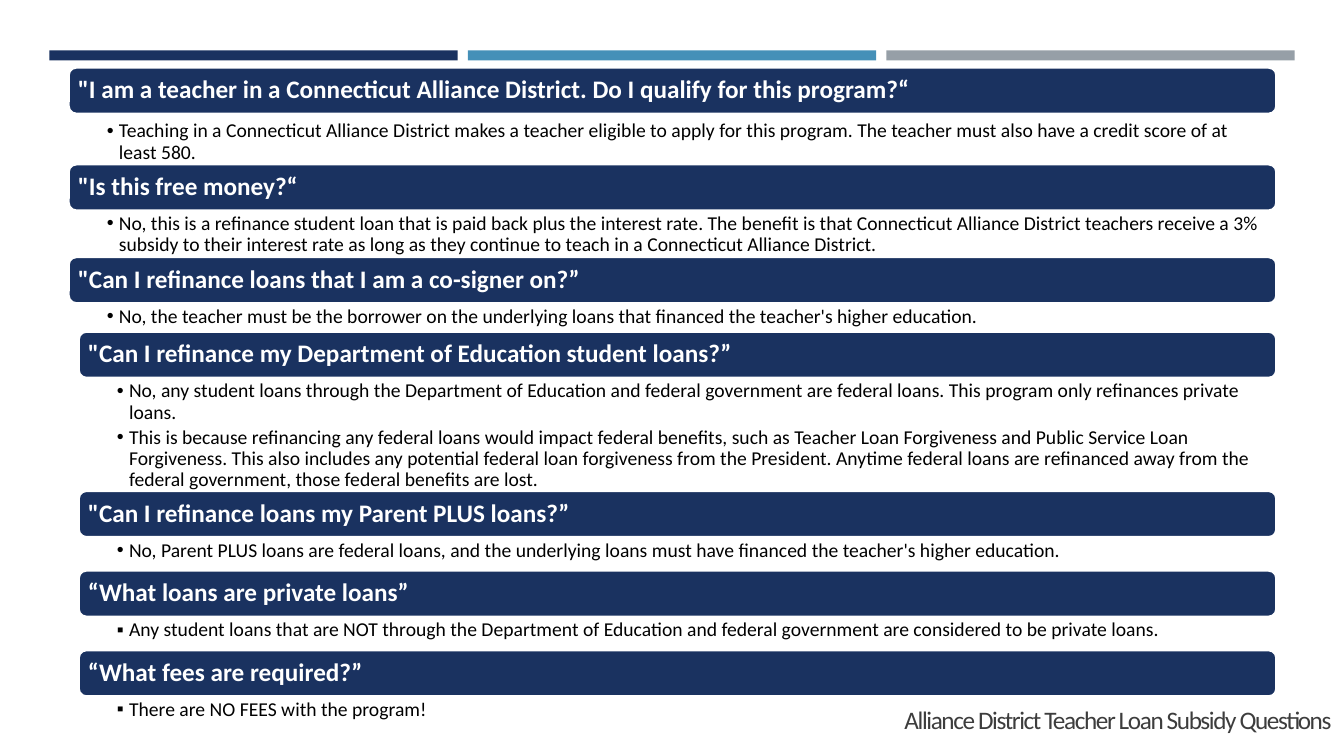
from dataclasses import dataclass

from lxml import etree
from pptx import Presentation
from pptx.dml.color import RGBColor
from pptx.enum.shapes import MSO_SHAPE
from pptx.enum.text import MSO_ANCHOR, MSO_AUTO_SIZE, PP_ALIGN
from pptx.oxml.ns import qn
from pptx.util import Inches, Pt

RECT = MSO_SHAPE.RECTANGLE
ROUND = MSO_SHAPE.ROUNDED_RECTANGLE
TOP, MIDDLE = MSO_ANCHOR.TOP, MSO_ANCHOR.MIDDLE
LEFT = PP_ALIGN.LEFT
GROW = MSO_AUTO_SIZE.SHAPE_TO_FIT_TEXT


@dataclass(frozen=True)
class Theme:
    """Hold the colours, font and type sizes of the slide."""
    navy: str = "1A3260"
    blue: str = "4590B8"
    gray: str = "969FA7"
    white: str = "FFFFFF"
    black: str = "000000"
    dark: str = "3D3D3D"
    font: str = "Calibri"
    large: int = 18
    small: int = 14


THEME = Theme()
BAR = 0.46
RIGHT = 12.66
TITLE = "Alliance District Teacher Loan Subsidy Questions"

FIRST = [
    ("\"I am a teacher in a Connecticut Alliance District. Do I qualify for this program?“", "•", 0.04, 0.46,
     ["Teaching in a Connecticut Alliance District makes a teacher eligible to apply for this program. "
      "The teacher must also have a credit score of at least 580."]),
    ("\"Is this free money?“", "•", 0, 0.46,
     ["No, this is a refinance student loan that is paid back plus the interest rate. The benefit is that "
      "Connecticut Alliance District teachers receive a 3% subsidy to their interest rate as long as they "
      "continue to teach in a Connecticut Alliance District."]),
    ("\"Can I refinance loans that I am a co-signer on?”", "•", 0, 0.33,
     ["No, the teacher must be the borrower on the underlying loans that financed the teacher's "
      "higher education."]),
]

SECOND = [
    ("\"Can I refinance my Department of Education student loans?”", "•", 0, 1.12,
     ["No, any student loans through the Department of Education and federal government are federal loans. "
      "This program only refinances private loans.",
      "This is because refinancing any federal loans would impact federal benefits, such as Teacher Loan "
      "Forgiveness and Public Service Loan Forgiveness. This also includes any potential federal loan "
      "forgiveness from the President. Anytime federal loans are refinanced away from the federal "
      "government, those federal benefits are lost."]),
    ("\"Can I refinance loans my Parent PLUS loans?”", "•", 0, 0.33,
     ["No, Parent PLUS loans are federal loans, and the underlying loans must have financed the teacher's "
      "higher education."]),
    ("“What loans are private loans”", "▪", 0, 0.33,
     ["Any student loans that are NOT through the Department of Education and federal government are "
      "considered to be private loans."]),
    ("“What fees are required?”", "▪", 0, 0.33,
     ["There are NO FEES with the program!"]),
]


def color(code):
    """Turn a hex code into a colour."""
    return RGBColor.from_string(code)


def add_mark(para, mark):
    """Give a paragraph a bullet with a hanging indent."""
    props = para._p.get_or_add_pPr()
    props.set("marL", str(Inches(0.12)))
    props.set("indent", str(Inches(-0.12)))
    etree.SubElement(props, qn("a:buFont")).set("typeface", "Arial")
    etree.SubElement(props, qn("a:buChar")).set("char", mark)


def write(frame, lines, size, ink, bold=False, mark=None, anchor=TOP,
          inset=(0.1, 0.05, 0.1, 0.05), wrap=True, lead=0.9, after=0, track=None):
    """Fill a text frame with one paragraph for each line."""
    frame.word_wrap = wrap
    frame.vertical_anchor = anchor
    (frame.margin_left, frame.margin_top,
     frame.margin_right, frame.margin_bottom) = map(Inches, inset)
    for i, line in enumerate(lines):
        para = frame.add_paragraph() if i else frame.paragraphs[0]
        if mark:
            add_mark(para, mark)
        para.alignment = LEFT
        para.line_spacing = lead
        para.space_after = Pt(after)
        run = para.add_run()
        run.text = line
        font = run.font
        font.name, font.size, font.bold = THEME.font, Pt(size), bold
        font.color.rgb = color(ink)
        if track is not None:
            run._r.get_or_add_rPr().set("spc", str(track))


def add_block(slide, kind, box, fill, edge=None):
    """Draw a filled shape with an optional edge."""
    shape = slide.shapes.add_shape(kind, *map(Inches, box))
    shape.shadow.inherit = False
    shape.fill.solid()
    shape.fill.fore_color.rgb = color(fill)
    if edge:
        shape.line.color.rgb = color(edge)
        shape.line.width = Pt(1.75)
    else:
        shape.line.fill.background()
    return shape


def add_title(slide):
    """Place the title in the lower right corner."""
    title = slide.shapes.title
    title.left, title.top, title.width, title.height = map(Inches, (8.87, 6.94, 4.47, 0.4))
    write(title.text_frame, [TITLE], THEME.large, THEME.dark, wrap=False, lead=1.0, track=-100)
    title.text_frame.auto_size = GROW


def add_list(slide, left, top, items):
    """Stack questions and their answers down the slide."""
    width = RIGHT - left
    for ask, mark, gap, height, lines in items:
        bar = add_block(slide, ROUND, (left, top, width, BAR), THEME.navy, THEME.white)
        write(bar.text_frame, [ask], THEME.large, THEME.white, bold=True,
              anchor=MIDDLE, inset=(0.07,) * 4)
        top += BAR + gap
        reply = slide.shapes.add_textbox(*map(Inches, (left, top, width, height)))
        write(reply.text_frame, lines, THEME.small, THEME.black, mark=mark,
              inset=(0.38, 0.03, 0.14, 0.03), after=3)
        top += height


def main():
    """Build the slide and save it."""
    deck = Presentation()
    deck.slide_width, deck.slide_height = Inches(13.33), Inches(7.5)
    slide = deck.slides.add_slide(deck.slide_layouts[5])
    for i, fill in enumerate((THEME.navy, THEME.blue, THEME.gray)):
        add_block(slide, RECT, (0.49 + 4.15 * i, 0.5, 4.05, 0.1), fill)
    add_title(slide)
    add_list(slide, 0.78, 3.29, SECOND)
    add_list(slide, 0.68, 0.67, FIRST)
    deck.save("out.pptx")


if __name__ == "__main__":
    main()
